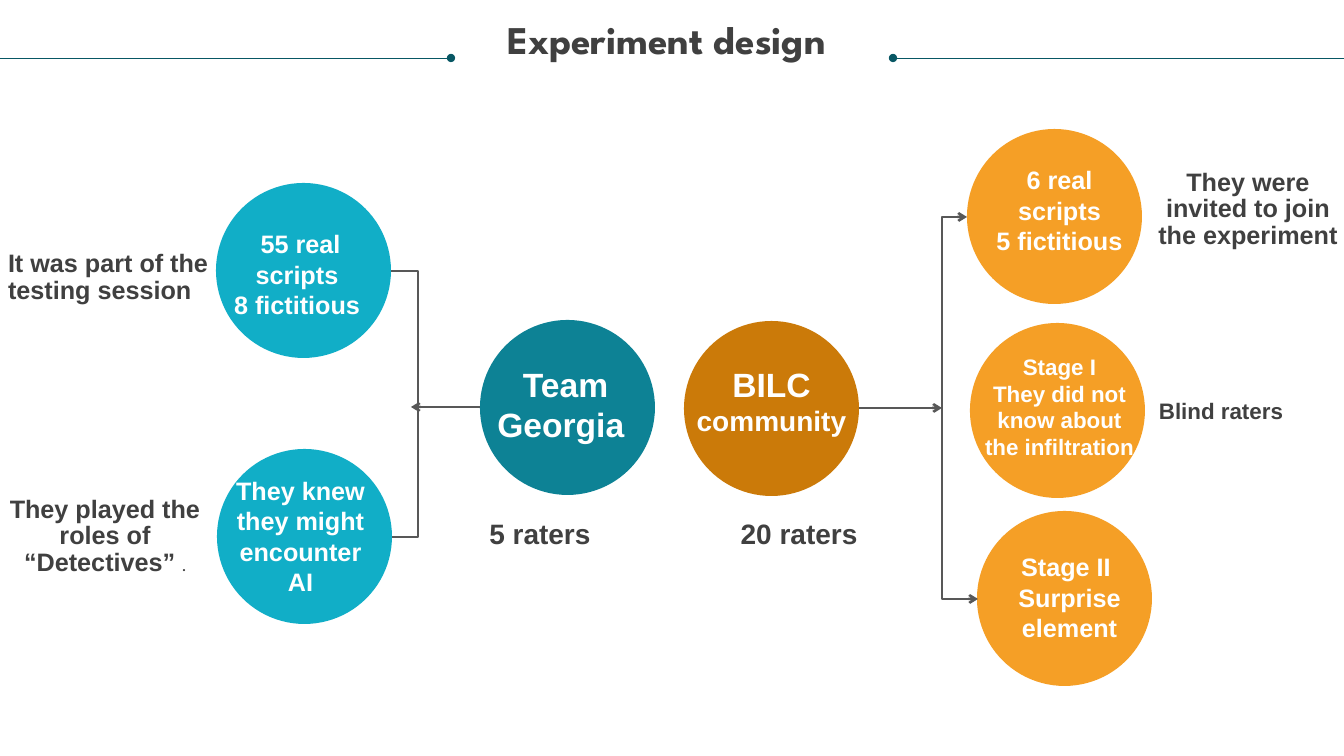
from lxml import etree
from pptx import Presentation
from pptx import util as u
from pptx.dml.color import RGBColor
from pptx.enum import shapes, text
from pptx.oxml.ns import qn

PX = 914400 / 100.8  # EMU in one px
COLOURS = {
    "rule": "085764", "ink": "404040", "arrow": "585858", "white": "FFFFFF",
    "teal": "0D8295", "cyan": "11AEC7", "brown": "CB7A09", "orange": "F59F26",
}
DIAMETER = 175
CAPTION_W = 151
LEFT, CENTER = text.PP_ALIGN.LEFT, text.PP_ALIGN.CENTER


def px(*lengths):
    return [u.Emu(round(n * PX)) for n in lengths]


def rgb(name):
    return RGBColor.from_string(COLOURS[name])


def add_text(s, box, paragraphs, size, colour="ink", align=CENTER, spacing=u.Pt(19),
             font="Arial", anchor=text.MSO_ANCHOR.MIDDLE):
    """A paragraph is a string, or a list of (text, format values) runs."""
    tf = s.shapes.add_textbox(*px(*box)).text_frame
    frame = dict(word_wrap=True, auto_size=text.MSO_AUTO_SIZE.SHAPE_TO_FIT_TEXT,
                 vertical_anchor=anchor, margin_left=0, margin_top=0,
                 margin_right=0, margin_bottom=0)
    for key, value in frame.items():
        setattr(tf, key, value)
    for i, runs in enumerate(paragraphs):
        p = tf.add_paragraph() if i else tf.paragraphs[0]
        p.alignment, p.line_spacing = align, spacing
        for words, changes in [(runs, {})] if isinstance(runs, str) else runs:
            r = p.add_run()
            r.text = words
            values = {"name": font, "size": u.Pt(size), "bold": True, **changes}
            for key, value in values.items():
                setattr(r.font, key, value)
            r.font.color.rgb = rgb(colour)


def add_line(s, start, end, colour="arrow", width=1.75, head=None, tail=None, via=None):
    """A straight line, or an elbow whose middle leg stands at x = via."""
    kind = shapes.MSO_CONNECTOR.STRAIGHT if via is None else shapes.MSO_CONNECTOR.ELBOW
    c = s.shapes.add_connector(kind, *px(*start, *end))
    c.line.color.rgb = rgb(colour)
    c.line.width = u.Pt(width)
    sp_pr = c._element.spPr
    if via is not None:
        guides = sp_pr.find(qn("a:prstGeom")).get_or_add_avLst()
        share = round(100000 * (via - start[0]) / (end[0] - start[0]))
        etree.SubElement(guides, qn("a:gd"), name="adj1", fmla=f"val {share}")
    ln = sp_pr.find(qn("a:ln"))
    for tag, arrow in (("a:headEnd", head), ("a:tailEnd", tail)):
        if arrow:
            etree.SubElement(ln, qn(tag), type=arrow)
    etree.SubElement(sp_pr, qn("a:effectLst"))


def add_circle(s, x, y, colour, caption_x, caption_y, caption_h, paragraphs, size):
    """A disc with its caption, which is offset from the disc's corner."""
    sp = s.shapes.add_shape(shapes.MSO_SHAPE.OVAL, *px(x, y, DIAMETER, DIAMETER))
    sp.shadow.inherit = False
    sp.fill.solid()
    sp.fill.fore_color.rgb = rgb(colour)
    sp.line.fill.background()
    add_text(s, (x + caption_x, y + caption_y, CAPTION_W, caption_h),
             paragraphs, size, "white", spacing=None)


def header(s, box):
    x, y, w, h = box
    rule_y = y + 58
    add_line(s, (x + 893, rule_y), (x + w, rule_y), "rule", 0.5, head="oval")
    add_line(s, (x, rule_y), (x + 451, rule_y), "rule", 0.5, tail="oval")
    add_text(s, (x + 25, y + 21, w - 51, h - 21), ["Experiment design "], 28,
             spacing=0.9, font="League Spartan", anchor=text.MSO_ANCHOR.TOP)


def group(s, box, circles, lines, labels):
    x, y = box[:2]
    for cx, cy, *rest in circles:
        add_circle(s, x + cx, y + cy, *rest)
    for (x1, y1), (x2, y2), via, ends in lines:
        add_line(s, (x + x1, y + y1), (x + x2, y + y2),
                 via=None if via is None else x + via, **ends)
    for (lx, ly, w, h), words, size, align in labels:
        add_text(s, (x + lx, y + ly, w, h), [words], size, align=align)


def team_georgia(s, box):
    group(
        s, box,
        circles=[
            (216, 63, "cyan", 9, 45, 92, ["55 real scripts ", "8 fictitious "], 18),
            (217, 329, "cyan", 8, 26, 122, ["They knew they might encounter AI"], 18),
            (480, 200, "teal", 10, 43, 82, ["Team Georgia "], 24),
        ],
        lines=[
            ((391, 151), (392, 417), 418, {}),
            ((480, 287), (411, 287), None, {"tail": "arrow"}),
        ],
        labels=[
            ((466, 403, 148, 27), "5 raters", 20, CENTER),
            ((8, 131, 203, 53), "It was part of the testing session", 18, LEFT),
            ((0, 376, 210, 81),
             [("They played the roles of “Detectives” ", {}),
              (".", {"name": "Karla", "size": u.Pt(14), "bold": False})], 18, CENTER),
        ])


def bilc_community(s, box):
    name = [("BILC", {}), (" ", {"name": "Karla", "size": u.Pt(16)}),
            ("community", {"size": u.Pt(20)})]
    group(
        s, box,
        circles=[
            (12, 201, "brown", 12, 42, 75, [name], 24),
            (298, 203, "orange", 14, 29, 109,
             ["Stage I", "They did not know about the infiltration"], 16),
            (295, 9, "orange", 17, 35, 92, ["6 real scripts", "5 fictitious"], 18),
            (305, 391, "orange", 17, 40, 92, ["Stage II ", "Surprise element"], 18),
        ],
        lines=[
            ((187, 288), (270, 288), None, {"tail": "arrow"}),
            ((295, 97), (306, 479), 270, {"head": "arrow", "tail": "arrow"}),
        ],
        labels=[
            ((57, 403, 148, 27), "20 raters ", 20, CENTER),
            ((480, 49, 192, 81), "They were invited to join the experiment", 18, CENTER),
            ((487, 277, 175, 27), "Blind raters", 16, LEFT),
        ])


def main():
    prs = Presentation()
    prs.slide_width, prs.slide_height = px(1344, 756)
    s = prs.slides.add_slide(prs.slide_layouts[6])
    header(s, (0, 0, 1344, 107))
    team_georgia(s, (0, 120, 672, 566))
    bilc_community(s, (672, 120, 672, 566))
    prs.save("out.pptx")


if __name__ == "__main__":
    main()
